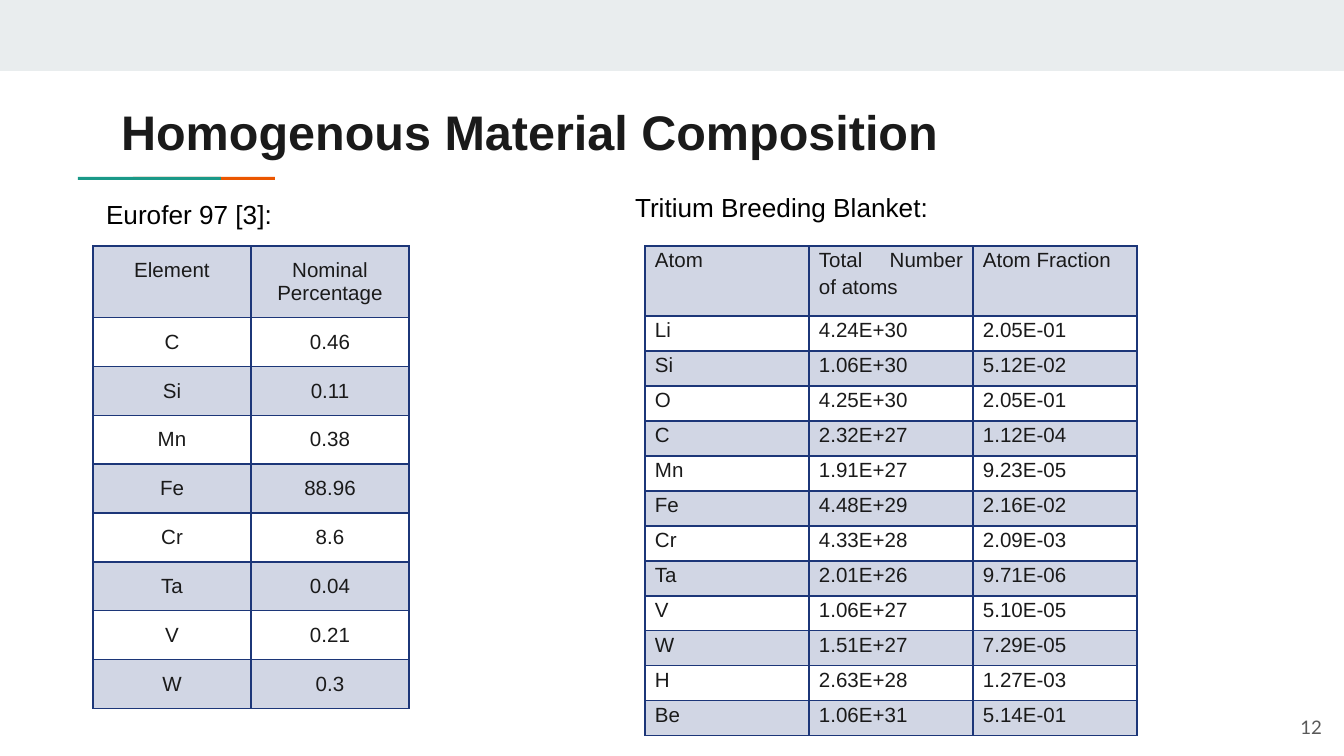
from dataclasses import dataclass

from lxml.etree import SubElement as Sub
from pptx import Presentation
from pptx.dml.color import RGBColor as Rgb
from pptx.enum.shapes import MSO_SHAPE as Shape
from pptx.enum.text import MSO_ANCHOR as Anchor, MSO_AUTO_SIZE as Fit, PP_ALIGN as Align
from pptx.oxml.ns import qn
from pptx.util import Emu, Pt


@dataclass(frozen=True)
class Theme:
    ink: str = "1A1A1A"
    black: str = "000000"
    gray: str = "595959"
    band: str = "E9EDEE"
    teal: str = "1A9988"
    orange: str = "EB5600"
    navy: str = "1C3678"
    font: str = "Arial"
    page: str = "Lato"
    head: int = 26
    label: int = 14
    body: int = 11
    small: int = 10


T = Theme()
INSET = 13

STEEL = [
    ("Element", "Nominal Percentage"),
    ("C", "0.46"), ("Si", "0.11"), ("Mn", "0.38"), ("Fe", "88.96"),
    ("Cr", "8.6"), ("Ta", "0.04"), ("V", "0.21"), ("W", "0.3"),
]
BLANKET = [
    ("Atom", "Total Number of atoms", "Atom Fraction"),
    ("Li", "4.24E+30", "2.05E-01"),
    ("Si", "1.06E+30", "5.12E-02"),
    ("O", "4.25E+30", "2.05E-01"),
    ("C", "2.32E+27", "1.12E-04"),
    ("Mn", "1.91E+27", "9.23E-05"),
    ("Fe", "4.48E+29", "2.16E-02"),
    ("Cr", "4.33E+28", "2.09E-03"),
    ("Ta", "2.01E+26", "9.71E-06"),
    ("V", "1.06E+27", "5.10E-05"),
    ("W", "1.51E+27", "7.29E-05"),
    ("H", "2.63E+28", "1.27E-03"),
    ("Be", "1.06E+31", "5.14E-01"),
]


def px(n):
    """Turn px into EMU; the slide is 1344 px, or 10 inches, wide."""
    return Emu(round(n * 9144000 / 1344))


def write(frame, text, size=T.body, color=T.ink, font=T.font, bold=False,
          align=Align.LEFT, lead=None):
    para = frame.paragraphs[0]
    para.alignment = align
    para.line_spacing = lead
    run = para.add_run()
    run.text = text
    run.font.size = Pt(size)
    run.font.name = font
    run.font.bold = bold
    run.font.color.rgb = Rgb.from_string(color)


def pad(item, side, top):
    item.margin_left = item.margin_right = px(side)
    item.margin_top = item.margin_bottom = px(top)


def setup(frame, anchor=Anchor.TOP):
    frame.word_wrap = True
    frame.auto_size = Fit.NONE
    frame.vertical_anchor = anchor
    pad(frame, INSET, INSET)


def add_bar(slide, box, color):
    bar = slide.shapes.add_shape(Shape.RECTANGLE, *map(px, box))
    bar.shadow.inherit = False
    bar.fill.solid()
    bar.fill.fore_color.rgb = Rgb.from_string(color)
    bar.line.fill.background()


def add_title(slide, box, text):
    title = slide.shapes.title
    title.left, title.top, title.width, title.height = map(px, box)
    setup(title.text_frame)
    write(title.text_frame, text, size=T.head, bold=True)


def add_text(slide, box, text, anchor=Anchor.TOP, **style):
    frame = slide.shapes.add_textbox(*map(px, box)).text_frame
    setup(frame, anchor)
    write(frame, text, **style)


def add_edges(cell):
    props = cell._tc.get_or_add_tcPr()
    for side in ("lnL", "lnR", "lnT", "lnB"):
        line = Sub(props, qn(f"a:{side}"), w=str(Pt(1)))
        fill = Sub(line, qn("a:solidFill"))
        Sub(fill, qn("a:srgbClr"), val=T.navy)


def tint(cell):
    cell.fill.solid()
    cell.fill.fore_color.rgb = Rgb.from_string(T.navy)
    color = cell._tc.tcPr.find(f".//{qn('a:solidFill')}[last()]")
    color = cell._tc.tcPr.findall(qn("a:solidFill"))[-1][0]
    Sub(color, qn("a:alpha"), val="20000")


def add_grid(slide, left, top, rows, wide, first, high, side, inset, **style):
    cols = len(rows[0])
    tall = first + high * (len(rows) - 1)
    box = map(px, (left, top, wide * cols, tall))
    grid = slide.shapes.add_table(len(rows), cols, *box).table
    grid.first_row = grid.horz_banding = False
    for col in grid.columns:
        col.width = px(wide)
    for i, row in enumerate(rows):
        grid.rows[i].height = px(high if i else first)
        for j, text in enumerate(row):
            cell = grid.cell(i, j)
            pad(cell, side, inset)
            add_edges(cell)
            # Shade the header and every second row
            if i % 2:
                cell.fill.background()
            else:
                tint(cell)
            write(cell.text_frame, text, **style)


def main():
    deck = Presentation()
    deck.slide_width, deck.slide_height = px(1344), px(756)
    slide = deck.slides.add_slide(deck.slide_layouts[5])

    # Top band and accent line
    add_bar(slide, (0, 0, 1344, 71), T.band)
    add_bar(slide, (133, 177, 142, 3), T.orange)
    add_bar(slide, (78, 177, 143, 3), T.teal)

    # Title and table labels
    add_title(slide, (108, 89, 1130, 79), "Homogenous Material Composition")
    label = {"size": T.label, "color": T.black}
    add_text(slide, (93, 185, 328, 39), "Eurofer 97 [3]:", **label)
    add_text(slide, (622, 178, 344, 46), "Tritium Breeding Blanket:", **label)

    # Composition tables
    add_grid(slide, 645, 246, BLANKET, wide=164, first=70, high=35,
             side=10, inset=0, align=Align.JUSTIFY, lead=1.15)
    add_grid(slide, 93, 246, STEEL, wide=158, first=63, high=43,
             side=INSET, inset=INSET, align=Align.CENTER)

    # Page number
    add_text(slide, (1255, 698, 80, 58), "12", anchor=Anchor.MIDDLE,
             size=T.small, color=T.gray, font=T.page, align=Align.RIGHT)

    deck.save("out.pptx")


if __name__ == "__main__":
    main()
